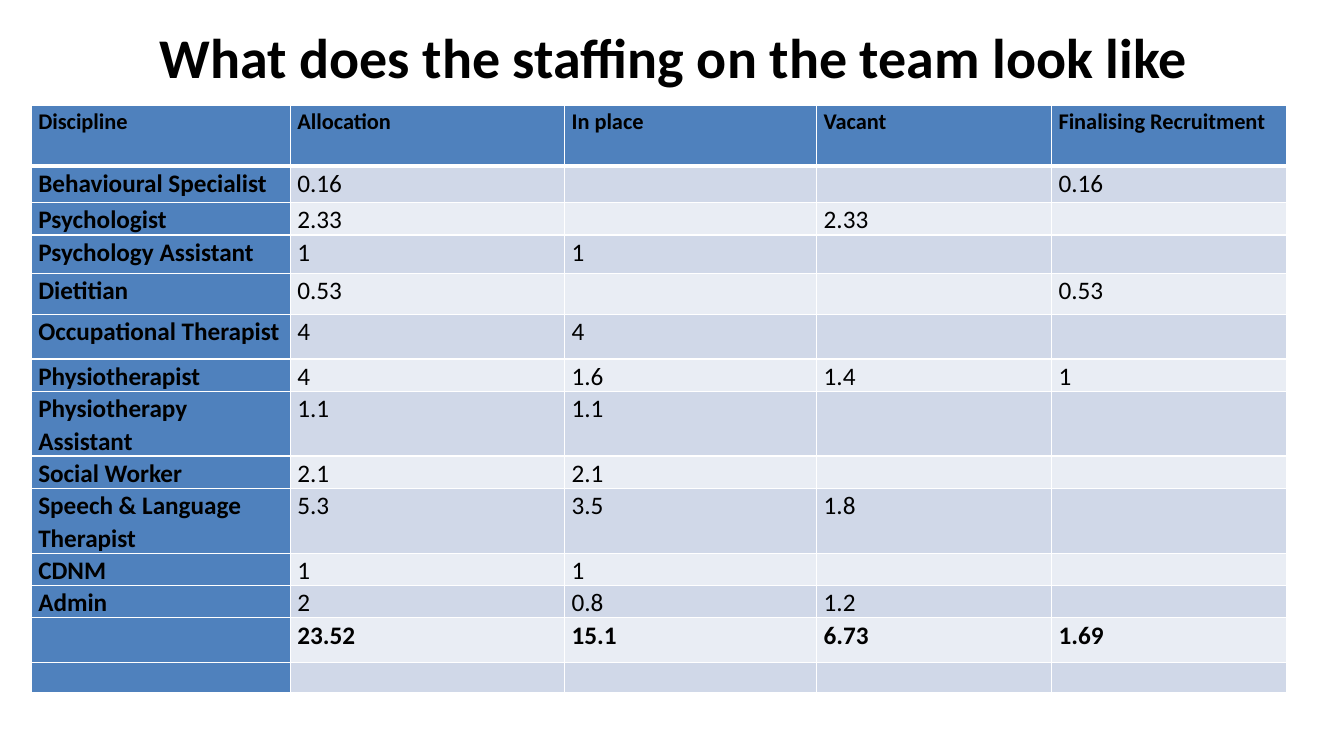
"""Build the team staffing slide."""
from dataclasses import dataclass

from lxml.etree import SubElement
from pptx import Presentation
from pptx.dml.color import RGBColor
from pptx.enum.text import MSO_ANCHOR, PP_ALIGN
from pptx.oxml.ns import qn
from pptx.slide import Slide
from pptx.table import _Cell
from pptx.text.text import TextFrame
from pptx.util import Inches, Pt

BLACK = RGBColor(0x00, 0x00, 0x00)
WHITE = RGBColor(0xFF, 0xFF, 0xFF)
HEADING_BLUE = RGBColor(0x4F, 0x81, 0xBD)
DARK_BAND = RGBColor(0xD0, 0xD8, 0xE8)
LIGHT_BAND = RGBColor(0xE9, 0xED, 0xF4)
FONT = "Calibri"
COLUMN_WIDTHS = (2.57, 2.72, 2.5, 2.33, 2.33)


@dataclass(frozen=True)
class StaffingRow:
    height: float
    discipline: str
    allocation: str = ""
    in_place: str = ""
    vacant: str = ""
    recruiting: str = ""
    size: int = 18
    bold: bool = False

    def values(self) -> tuple[str, ...]:
        return (self.discipline, self.allocation, self.in_place, self.vacant, self.recruiting)


STAFFING = (
    StaffingRow(0.6, "Discipline", "Allocation", "In place", "Vacant",
                "Finalising Recruitment", size=16, bold=True),
    StaffingRow(0.36, "Behavioural Specialist", "0.16", recruiting="0.16"),
    StaffingRow(0.3, "Psychologist", "2.33", vacant="2.33"),
    StaffingRow(0.38, "Psychology Assistant", "1", "1"),
    StaffingRow(0.41, "Dietitian", "0.53", recruiting="0.53"),
    StaffingRow(0.44, "Occupational Therapist", "4", "4"),
    StaffingRow(0.3, "Physiotherapist", "4", "1.6", "1.4", "1"),
    StaffingRow(0.45, "Physiotherapy Assistant", "1.1", "1.1"),
    StaffingRow(0.3, "Social Worker", "2.1", "2.1"),
    StaffingRow(0.3, "Speech & Language Therapist", "5.3", "3.5", "1.8"),
    StaffingRow(0.3, "CDNM", "1", "1"),
    StaffingRow(0.3, "Admin", "2", "0.8", "1.2"),
    StaffingRow(0.44, "", "23.52", "15.1", "6.73", "1.69", bold=True),
    StaffingRow(0.3, ""),
)


def write_text(frame: TextFrame, text: str, *, size: float, bold: bool = False,
               align: PP_ALIGN = PP_ALIGN.LEFT, line_spacing: float = 1.0,
               space_after: float = 0) -> None:
    paragraph = frame.paragraphs[0]
    paragraph.alignment = align
    paragraph.line_spacing = line_spacing
    paragraph.space_after = Pt(space_after)
    if not text:
        SubElement(paragraph._p, qn("a:endParaRPr"), sz=str(int(size * 100)))
        return
    run = paragraph.add_run()
    run.text = text
    run.font.name = FONT
    run.font.size = Pt(size)
    run.font.bold = bold
    run.font.color.rgb = BLACK


def set_borders(cell: _Cell, top: float, bottom: float) -> None:
    properties = cell._tc.get_or_add_tcPr()
    for side, width in (("L", 1), ("R", 1), ("T", top), ("B", bottom)):
        line = SubElement(properties, qn(f"a:ln{side}"), w=str(Pt(width)))
        fill = SubElement(line, qn("a:solidFill"))
        SubElement(fill, qn("a:srgbClr"), val=str(WHITE))


def add_title(slide: Slide, text: str) -> None:
    shape = slide.shapes.add_textbox(Inches(0.68), Inches(0.13), Inches(12), Inches(0.85))
    shape.text_frame.word_wrap = True
    shape.text_frame.vertical_anchor = MSO_ANCHOR.MIDDLE
    write_text(shape.text_frame, text, size=40, bold=True, align=PP_ALIGN.CENTER)


def add_staffing_table(slide: Slide) -> None:
    shape = slide.shapes.add_table(len(STAFFING), len(COLUMN_WIDTHS), Inches(0.31),
                                   Inches(1.05), Inches(12.45), Inches(5.73))
    table = shape.table
    table.first_row = False
    table.horz_banding = False
    for column, width in zip(table.columns, COLUMN_WIDTHS):
        column.width = Inches(width)
    for row_index, staffing in enumerate(STAFFING):
        table.rows[row_index].height = Inches(staffing.height)
        band = DARK_BAND if row_index % 2 else LIGHT_BAND
        for column_index, text in enumerate(staffing.values()):
            cell = table.cell(row_index, column_index)
            is_heading = row_index == 0 or column_index == 0
            cell.margin_left = cell.margin_right = Inches(0.07)
            cell.margin_top = cell.margin_bottom = 0
            set_borders(cell, top=3 if row_index == 1 else 1, bottom=3 if row_index == 0 else 1)
            cell.fill.solid()
            cell.fill.fore_color.rgb = HEADING_BLUE if is_heading else band
            write_text(cell.text_frame, text, size=staffing.size if text else 16,
                       bold=staffing.bold or is_heading, line_spacing=1.07, space_after=8)


def main() -> None:
    presentation = Presentation()
    presentation.slide_width = Inches(13.33)
    presentation.slide_height = Inches(7.5)
    slide = presentation.slides.add_slide(presentation.slide_layouts[6])
    add_title(slide, "What does the staffing on the team look like")
    add_staffing_table(slide)
    presentation.save("out.pptx")


if __name__ == "__main__":
    main()
